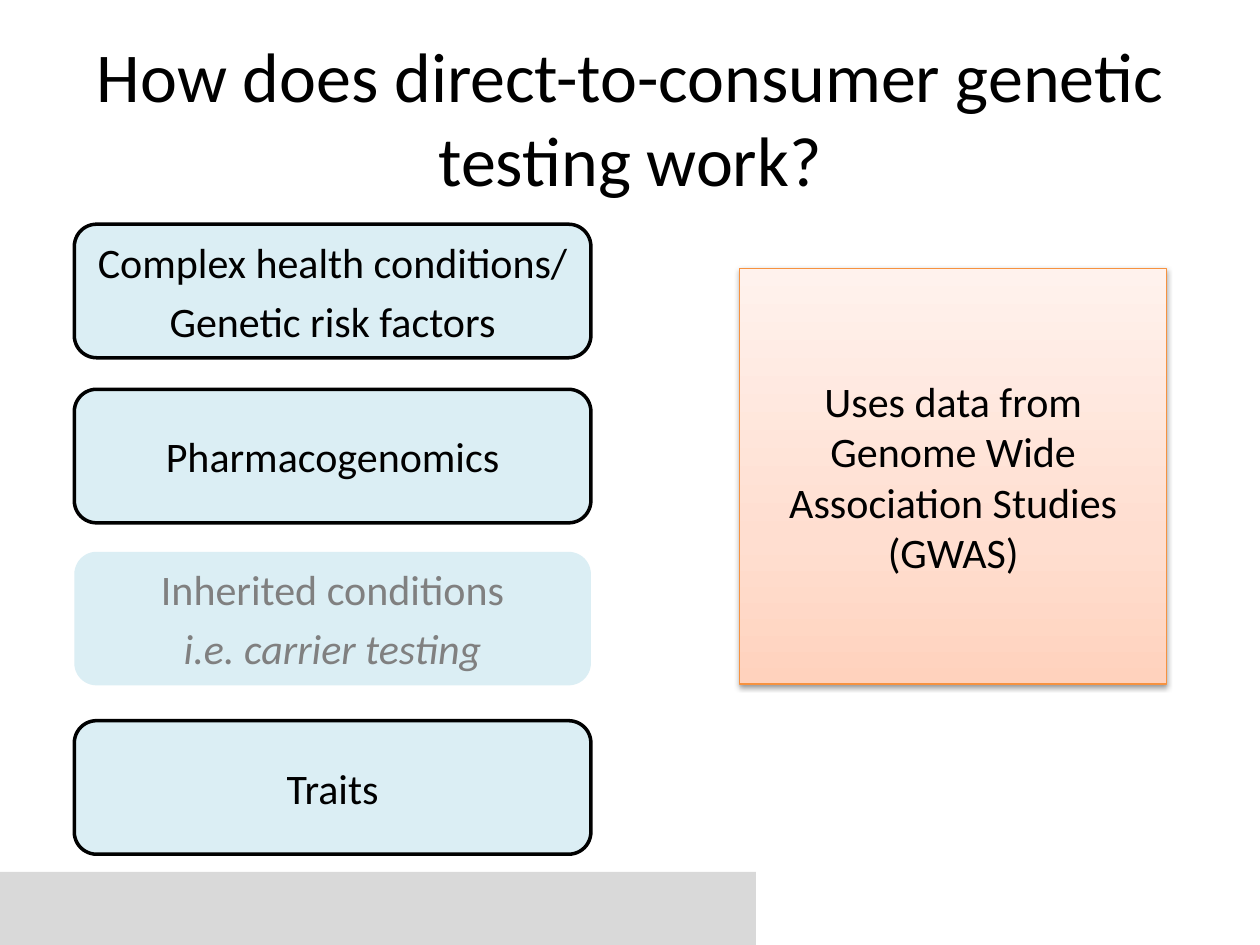
from copy import deepcopy

from lxml.etree import SubElement
from pptx import Presentation
from pptx.dml.color import RGBColor
from pptx.enum.shapes import MSO_SHAPE as Shape
from pptx.enum.text import MSO_ANCHOR as Anchor, MSO_AUTO_SIZE as Fit, PP_ALIGN as Align
from pptx.oxml.ns import qn
from pptx.util import Inches, Pt

BLACK = RGBColor(0x00, 0x00, 0x00)
GREY = RGBColor(0x80, 0x80, 0x80)
BAND = RGBColor(0xD9, 0xD9, 0xD9)
BLUE = RGBColor(0xDB, 0xEE, 0xF4)
ORANGE = RGBColor(0xF6, 0x92, 0x40)
PEACH = [
    (0, RGBColor(0xFF, 0xD2, 0xBD)),
    (0.35, RGBColor(0xFF, 0xDE, 0xD0)),
    (1, RGBColor(0xFF, 0xF2, 0xED)),
]

# top, lines, in focus
TOPICS = [
    (1.78, ["Complex health conditions/", "Genetic risk factors"], True),
    (3.09, ["Pharmacogenomics"], True),
    (4.38, ["Inherited conditions", "i.e. carrier testing"], False),
    (5.72, ["Traits"], True),
]


def style(font, color, **form):
    font.color.rgb = color
    for key, value in {"name": "Calibri", "size": Pt(24), **form}.items():
        setattr(font, key, value)


def write(shape, lines, color, **form):
    """Fill a shape with centred paragraphs."""
    frame = shape.text_frame
    frame.word_wrap = True
    frame.auto_size = Fit.NONE
    frame.vertical_anchor = Anchor.MIDDLE
    for i, line in enumerate(lines):
        para = frame.paragraphs[0] if i == 0 else frame.add_paragraph()
        para.text = line
        para.alignment = Align.CENTER
        if i:
            para.space_before = Pt(4.8)
        style(para.runs[0].font, color, **form)


def add_box(slide, kind, box, fill=None, line=None, width=2):
    shape = slide.shapes.add_shape(kind, *map(Inches, box))
    shape.shadow.inherit = False
    if fill is not None:
        shape.fill.solid()
        shape.fill.fore_color.rgb = fill
    if line is None:
        shape.line.fill.background()
    else:
        shape.line.color.rgb = line
        shape.line.width = Pt(width)
    return shape


def add_title(slide, box):
    title = slide.shapes.title
    title.left, title.top, title.width, title.height = map(Inches, box)
    write(title, ["How does direct-to-consumer genetic testing work?"], BLACK, size=Pt(40))


def add_topics(slide, left, width, height):
    for top, lines, focus in TOPICS:
        box = (left, top, width, height)
        shape = add_box(slide, Shape.ROUNDED_RECTANGLE, box, BLUE, BLACK if focus else None)
        write(shape, lines, BLACK if focus else GREY)
        if not focus:
            shape.text_frame.paragraphs[1].runs[0].font.italic = True


def blend(shape, stops, angle):
    """Give a shape a gradient with any number of stops."""
    fill = shape.fill
    fill.gradient()
    fill.gradient_angle = angle
    nodes = shape.element.spPr.find(qn("a:gradFill")).find(qn("a:gsLst"))
    for _ in range(len(stops) - len(nodes)):
        nodes.append(deepcopy(nodes[0]))
    for stop, (pos, color) in zip(fill.gradient_stops, stops):
        stop.position = pos
        stop.color.rgb = color


def drop_shadow(shape):
    effects = shape.element.spPr.find(qn("a:effectLst"))
    shadow = SubElement(effects, qn("a:outerShdw"), blurRad=str(Pt(3.1)), dist=str(Pt(1.6)),
                        dir="5400000", rotWithShape="0")
    color = SubElement(shadow, qn("a:srgbClr"), val=str(BLACK))
    SubElement(color, qn("a:alpha"), val="38000")


def add_source(slide, box):
    shape = add_box(slide, Shape.RECTANGLE, box, line=ORANGE, width=0.75)
    blend(shape, PEACH, 90)
    drop_shadow(shape)
    write(shape, ["Uses data from Genome Wide Association Studies (GWAS)"], BLACK)


def main():
    deck = Presentation()
    deck.slide_width, deck.slide_height = Inches(10), Inches(7.5)
    slide = deck.slides.add_slide(deck.slide_layouts[5])
    add_box(slide, Shape.RECTANGLE, (0, 6.92, 6, 0.58), BAND)
    add_title(slide, (0.5, 0.3, 9, 1.25))
    add_topics(slide, 0.59, 4.1, 1.06)
    add_source(slide, (5.87, 2.13, 3.39, 3.3))
    deck.save("out.pptx")


if __name__ == "__main__":
    main()
